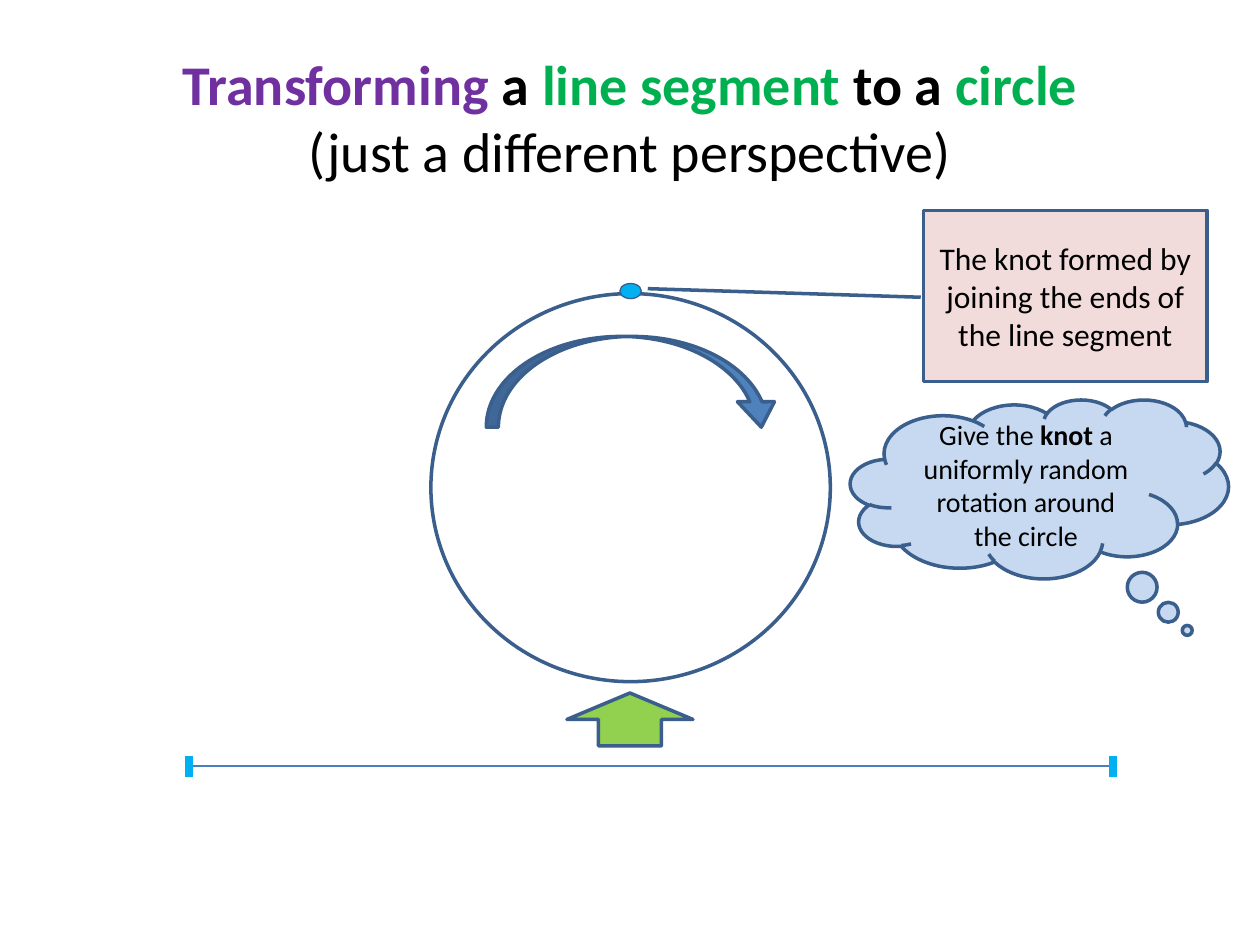
"""Build a slide that turns a line segment into a circle with a knot."""
from dataclasses import dataclass
from typing import Optional

from pptx import Presentation
from pptx.dml.color import RGBColor
from pptx.enum.shapes import MSO_CONNECTOR, MSO_SHAPE
from pptx.enum.text import MSO_ANCHOR, PP_ALIGN
from pptx.oxml.ns import qn
from pptx.util import Inches, Pt
from lxml.etree import SubElement

FONT = "Calibri"
BLACK, OUTLINE, KNOT = "000000", "3A5F8C", "00B0F0"


@dataclass
class TextRun:
    text: str
    color: str = BLACK
    bold: bool = False


@dataclass
class Figure:
    kind: MSO_SHAPE
    box: tuple[float, float, float, float]
    fill: Optional[str] = None
    weight: float = 2
    adjustments: tuple[float, ...] = ()
    runs: tuple[TextRun, ...] = ()
    size: float = 18


@dataclass
class Segment:
    start: tuple[float, float]
    end: tuple[float, float]
    color: str
    weight: float


LEFT, RIGHT, TOP, MIDDLE, BOTTOM = 1.5, 8.83, 6, 6.08, 6.17

TITLE = (
    TextRun("Transforming ", "7030A0", True),
    TextRun("a ", bold=True),
    TextRun("line segment ", "00B050", True),
    TextRun("to a ", bold=True),
    TextRun("circle", "00B050", True),
)
SUBTITLE = (TextRun("(just a different perspective)"),)

FIGURES = (
    Figure(MSO_SHAPE.OVAL, (3.42, 2.33, 3.17, 3.08)),
    Figure(MSO_SHAPE.CURVED_DOWN_ARROW, (3.86, 2.67, 2.33, 0.72), "4F81BD",
           adjustments=(0.134, 0.408, 0.28)),
    Figure(MSO_SHAPE.OVAL, (4.92, 2.25, 0.17, 0.12), KNOT, 0.75),
    Figure(MSO_SHAPE.UP_ARROW, (4.5, 5.5, 1, 0.42), "92D050"),
)
SEGMENTS = (
    Segment((LEFT, MIDDLE), (RIGHT, MIDDLE), "4B7EBC", 1.5),
    *(Segment((x, TOP), (x, BOTTOM), KNOT, 4.5) for x in (LEFT, RIGHT)),
)
CALLOUTS = (
    Figure(MSO_SHAPE.LINE_CALLOUT_1, (7.33, 1.67, 2.25, 1.36), "F2DCDB",
           adjustments=(0.507, -0.01, 0.457, -0.973),
           runs=(TextRun("The knot formed by joining the ends of the line segment"),)),
    Figure(MSO_SHAPE.CLOUD_CALLOUT, (6.75, 3.17, 3, 1.42), "C6D9F1",
           adjustments=(0.391, 0.791), size=16,
           runs=(TextRun("Give the "), TextRun("knot", bold=True),
                 TextRun(" a uniformly random rotation around the circle"))),
)


def rgb(value: str) -> RGBColor:
    return RGBColor.from_string(value)


def add_runs(p, runs: tuple[TextRun, ...], size: float) -> None:
    p.alignment = PP_ALIGN.CENTER
    for run in runs:
        r = p.add_run()
        r.text = run.text
        r.font.name, r.font.size, r.font.bold = FONT, Pt(size), run.bold
        r.font.color.rgb = rgb(run.color)


def set_title(sp) -> None:
    sp.left, sp.top, sp.width, sp.height = map(Inches, (0.5, 0.3, 9, 1.25))
    tf = sp.text_frame
    tf.vertical_anchor = MSO_ANCHOR.MIDDLE
    p = tf.paragraphs[0]
    add_runs(p, TITLE, 32)
    p.add_line_break()
    add_runs(p, SUBTITLE, 32)


def draw_figure(shapes, figure: Figure) -> None:
    sp = shapes.add_shape(figure.kind, *map(Inches, figure.box))
    sp.shadow.inherit = False
    for i, value in enumerate(figure.adjustments):
        sp.adjustments[i] = value
    if figure.fill:
        sp.fill.solid()
        sp.fill.fore_color.rgb = rgb(figure.fill)
    else:
        sp.fill.background()
    sp.line.color.rgb = rgb(OUTLINE)
    sp.line.width = Pt(figure.weight)
    if figure.runs:
        tf = sp.text_frame
        tf.word_wrap = True
        tf.vertical_anchor = MSO_ANCHOR.MIDDLE
        add_runs(tf.paragraphs[0], figure.runs, figure.size)


def draw_segment(shapes, segment: Segment) -> None:
    line = shapes.add_connector(
        MSO_CONNECTOR.STRAIGHT, *map(Inches, segment.start + segment.end))
    line.line.color.rgb = rgb(segment.color)
    line.line.width = Pt(segment.weight)
    SubElement(line._element.spPr, qn("a:effectLst"))


def main() -> None:
    prs = Presentation()
    prs.slide_width, prs.slide_height = Inches(10), Inches(7.5)
    s = prs.slides.add_slide(prs.slide_layouts[5])
    set_title(s.shapes.title)
    for figure in FIGURES:
        draw_figure(s.shapes, figure)
    group = s.shapes.add_group_shape()
    for segment in SEGMENTS:
        draw_segment(group.shapes, segment)
    for callout in CALLOUTS:
        draw_figure(s.shapes, callout)
    prs.save("out.pptx")


if __name__ == "__main__":
    main()
